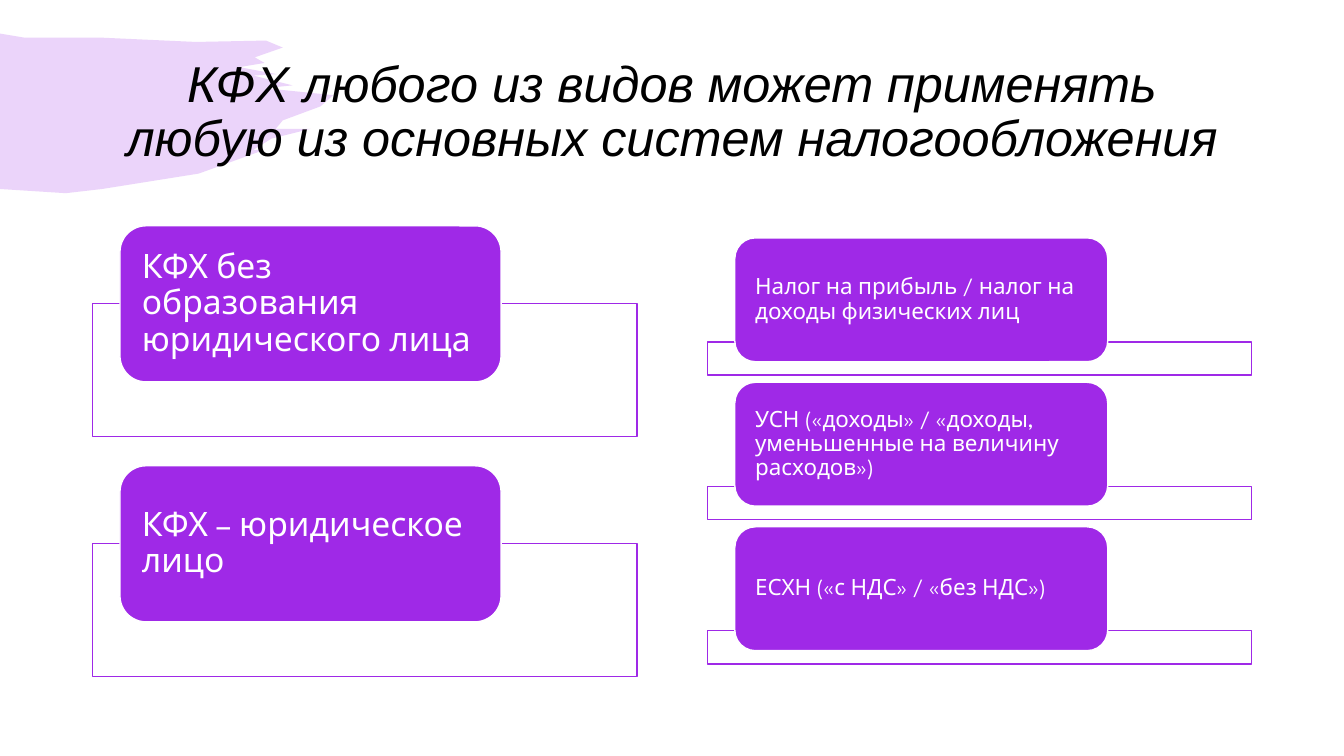
from pptx import Presentation
from pptx.dml.color import RGBColor
from pptx.enum.shapes import MSO_SHAPE as Kind
from pptx.enum.text import MSO_ANCHOR as Anchor, PP_ALIGN as Align
from pptx.oxml.ns import qn
from pptx.util import Pt
from lxml.etree import SubElement

PURPLE, WHITE, BLACK = "9F29E7", "FFFFFF", "000000"
FORMS = ["КФХ без образования юридического лица", "КФХ – юридическое лицо"]
TAXES = [
    "Налог на прибыль / налог на доходы физических лиц",
    "УСН («доходы» / «доходы, уменьшенные на величину расходов»)",
    "ЕСХН («с НДС» / «без НДС»)",
]
BRUSH = [
    (0, 24), (18, 27), (74, 27), (140, 30), (190, 29), (202, 34),
    (182, 41), (189, 45), (171, 48), (198, 53), (181, 54), (197, 58),
    (209, 61), (189, 63), (238, 68), (229, 76), (202, 86), (197, 92),
    (222, 92), (194, 99), (181, 107), (189, 107), (142, 124), (73, 135),
    (47, 138), (0, 135),
]


def color(code):
    """Turn a hex string into a colour."""
    return RGBColor.from_string(code)


def paint(shape, fill, line=None, alpha=100):
    """Set fill, opacity in percent and outline, without a shadow."""
    shape.shadow.inherit = False
    shape.fill.solid()
    shape.fill.fore_color.rgb = color(fill)
    if alpha < 100:
        tone = next(shape.element.iter(qn("a:srgbClr")))
        SubElement(tone, qn("a:alpha"), val=str(alpha * 1000))
    if line:
        shape.line.color.rgb = color(line)
        shape.line.width = Pt(1)
    else:
        shape.line.fill.background()


def write(shape, text, size, font, ink, align, pad):
    """Write one vertically centred paragraph with side and top insets."""
    frame = shape.text_frame
    frame.text = text
    frame.word_wrap = True
    frame.vertical_anchor = Anchor.MIDDLE
    frame.margin_left = frame.margin_right = Pt(pad[0])
    frame.margin_top = frame.margin_bottom = Pt(pad[1])
    para = frame.paragraphs[0]
    para.alignment = align
    para.line_spacing = 0.9
    face = para.runs[0].font
    face.size, face.name = Pt(size), font
    face.color.rgb = color(ink)
    return face


def add_brush(slide):
    """Draw the pale brush stroke at the left edge."""
    start, *rest = [(Pt(x), Pt(y)) for x, y in BRUSH]
    path = slide.shapes.build_freeform(*start)
    path.add_line_segments(rest, close=True)
    paint(path.convert_to_shape(), PURPLE, alpha=20)


def add_title(slide, text):
    """Add the italic heading."""
    box = slide.shapes.add_textbox(Pt(66.2), Pt(28.8), Pt(828), Pt(104.4))
    face = write(box, text, 36, "Arial", BLACK, Align.CENTER, (7.2, 3.6))
    face.italic = True


def add_box(slide, kind, left, top, wide, high):
    """Add a preset shape measured in points."""
    return slide.shapes.add_shape(kind, Pt(left), Pt(top), Pt(wide), Pt(high))


def add_list(slide, texts, frame, card, pitch, size):
    """Stack cards, each over its outlined frame, at an even pitch."""
    for row, text in enumerate(texts):
        (left, top, wide, high), drop = frame, row * pitch
        back = add_box(slide, Kind.RECTANGLE, left, top + drop, wide, high)
        paint(back, WHITE, PURPLE, 90)
        left, top, wide, high = card
        front = add_box(slide, Kind.ROUNDED_RECTANGLE, left, top + drop, wide, high)
        paint(front, PURPLE, WHITE)
        write(front, text, size, "League Spartan", WHITE, Align.LEFT, (10.2, 0))


def main():
    """Build and save the slide."""
    deck = Presentation()
    deck.slide_width, deck.slide_height = Pt(960), Pt(540)
    slide = deck.slides.add_slide(deck.slide_layouts[6])
    add_brush(slide)
    add_title(slide, "КФХ любого из видов может применять "
                     "любую из основных систем налогообложения")
    add_list(slide, FORMS, (66.2, 216.7, 388.8, 95), (85.7, 161.3, 272.2, 111.5), 171.4, 24)
    add_list(slide, TAXES, (505.4, 244.2, 388.8, 23.8), (524.9, 169.9, 266.4, 88.5), 103.2, 16)
    deck.save("out.pptx")


if __name__ == "__main__":
    main()
